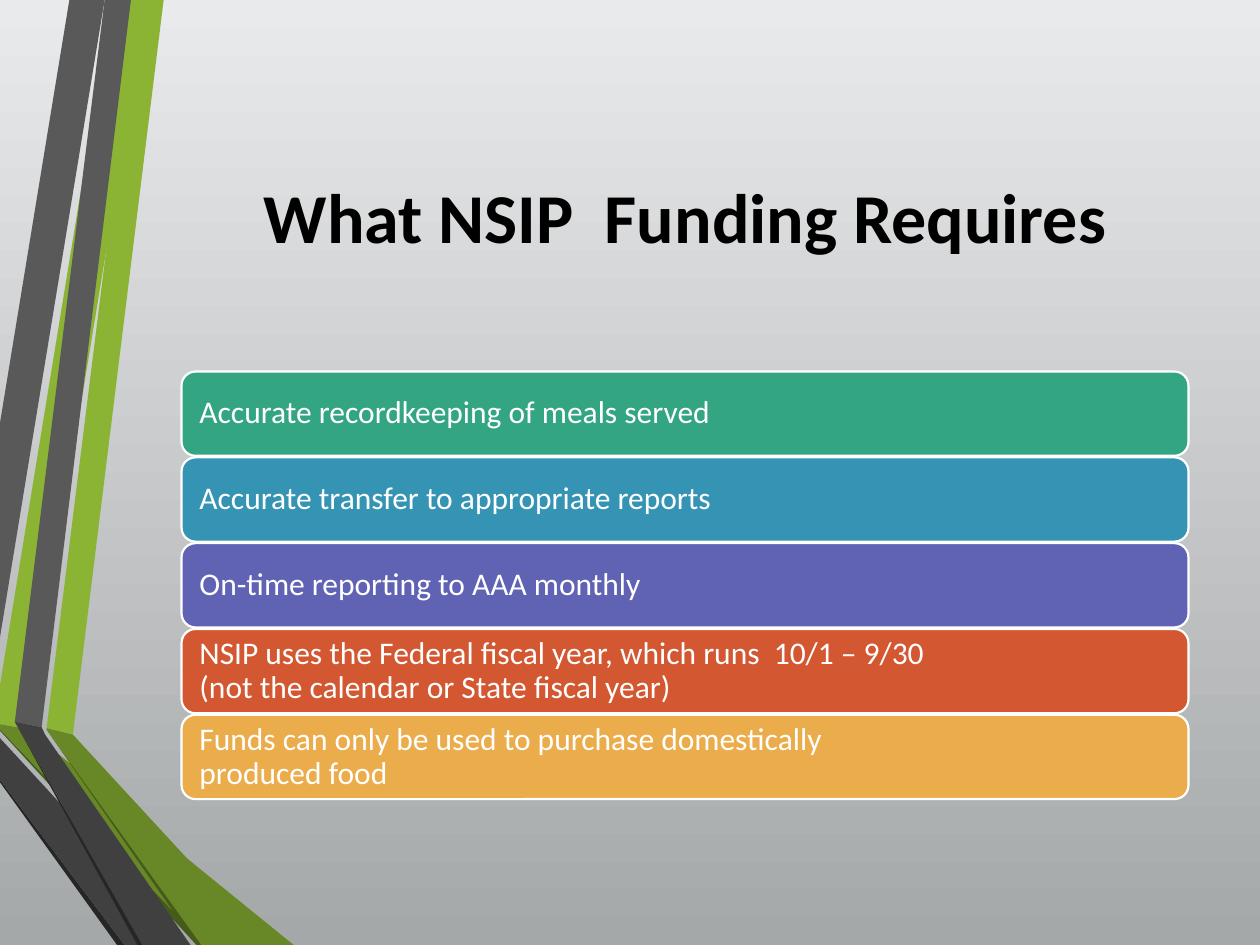
"""Build the slide on what NSIP funding requires."""
from pptx import Presentation
from pptx import util as u
from pptx.dml.color import RGBColor
from pptx.enum import shapes, text

BLACK = RGBColor(0x00, 0x00, 0x00)
WHITE = RGBColor(0xFF, 0xFF, 0xFF)
GREEN = RGBColor(0x8B, 0xB4, 0x34)
MOSS = RGBColor(0x68, 0x87, 0x27)
DARK_MOSS = RGBColor(0x46, 0x5A, 0x1A)
GRAY = RGBColor(0x59, 0x59, 0x59)
CHARCOAL = RGBColor(0x40, 0x40, 0x40)
SOOT = RGBColor(0x26, 0x26, 0x26)
SKY = RGBColor(0xE9, 0xEA, 0xEB)
STEEL = RGBColor(0xA5, 0xA8, 0xA9)

FONT = "Calibri"
HEADING = "What NSIP  Funding Requires"
REQUIREMENTS = [
    ("Accurate recordkeeping of meals served", RGBColor(0x33, 0xA5, 0x83)),
    ("Accurate transfer to appropriate reports", RGBColor(0x35, 0x94, 0xB4)),
    ("On-time reporting to AAA monthly", RGBColor(0x60, 0x63, 0xB4)),
    ("NSIP uses the Federal fiscal year, which runs  10/1 – 9/30\v"
     "(not the calendar or State fiscal year)", RGBColor(0xD3, 0x57, 0x31)),
    ("Funds can only be used to purchase domestically\vproduced food",
     RGBColor(0xEB, 0xAC, 0x4B)),
]
RIBBONS = [
    (GREEN, [(0, 13.82), (0, 14.6), (0.56, 14.7), (2.97, 0), (2.26, 0)]),
    (GRAY, [(2.11, 0), (1.4, 0), (0, 8.53), (0, 12.85)]),
    (SOOT, [(0, 15.72), (0, 15.77), (2.36, 19.05), (2.51, 19.05)]),
    (DARK_MOSS, [(0, 14.7), (0, 14.73), (3.96, 19.05), (4.14, 19.05)]),
    (MOSS, [(0, 14.7), (4.14, 19.05), (5.92, 19.05), (0.56, 14.7), (0, 14.6)]),
    (CHARCOAL, [(0, 15.72), (2.51, 19.05), (3.84, 19.05), (0, 14.88)]),
    (GREEN, [(0.94, 14.68), (1.47, 14.81), (3.3, 0), (2.77, 0)]),
    (GRAY, [(2.64, 0), (2.11, 0), (0.3, 14.55), (0.84, 14.66)]),
    (SOOT, [(0.3, 14.55), (2.77, 19.05), (2.87, 19.05)]),
    (DARK_MOSS, [(0.94, 14.71), (3.96, 19.05), (4.06, 19.05)]),
    (MOSS, [(0.94, 14.71), (4.06, 19.05), (5.38, 19.05), (1.47, 14.81), (0.94, 14.68)]),
    (CHARCOAL, [(3.84, 19.05), (0.91, 14.81), (0.84, 14.66), (0.3, 14.55), (2.87, 19.05)]),
]
LEFT, WIDTH = u.Cm(3.66), u.Cm(20.3)
BAR_TOP, BAR_HEIGHT, BAR_PITCH = u.Cm(7.49), u.Cm(1.7), u.Cm(1.73)


def style_font(paragraph, size, color, bold=False):
    for run in paragraph.runs:
        run.font.name = FONT
        run.font.size = u.Pt(size)
        run.font.bold = bold
        run.font.color.rgb = color


def paint_background(slide):
    backdrop = slide.background.fill
    backdrop.gradient()
    backdrop.gradient_angle = 270
    for stop, color in zip(backdrop.gradient_stops, (SKY, STEEL)):
        stop.color.rgb = color


def add_ribbon(slide, color, corners):
    start, *others = [(u.Cm(x), u.Cm(y)) for x, y in corners]
    outline = slide.shapes.build_freeform(*start)
    outline.add_line_segments(others, close=True)
    ribbon = outline.convert_to_shape()
    ribbon.shadow.inherit = False
    ribbon.fill.solid()
    ribbon.fill.fore_color.rgb = color
    ribbon.line.fill.background()


def set_heading(slide):
    heading = slide.shapes.title
    heading.left, heading.top = LEFT, u.Cm(1.91)
    heading.width, heading.height = WIDTH, u.Cm(4.88)
    frame = heading.text_frame
    frame.text = HEADING
    frame.vertical_anchor = text.MSO_ANCHOR.MIDDLE
    frame.paragraphs[0].alignment = text.PP_ALIGN.CENTER
    style_font(frame.paragraphs[0], 40, BLACK, bold=True)


def add_requirement(slide, row, wording, color):
    bar = slide.shapes.add_shape(shapes.MSO_SHAPE.ROUNDED_RECTANGLE, LEFT,
                                 BAR_TOP + row * BAR_PITCH, WIDTH, BAR_HEIGHT)
    bar.shadow.inherit = False
    bar.fill.solid()
    bar.fill.fore_color.rgb = color
    bar.line.color.rgb = WHITE
    bar.line.width = u.Pt(1.25)
    frame = bar.text_frame
    frame.word_wrap = True
    frame.vertical_anchor = text.MSO_ANCHOR.MIDDLE
    frame.margin_left = frame.margin_right = u.Cm(0.28)
    frame.margin_top = frame.margin_bottom = u.Cm(0.2)
    paragraph = frame.paragraphs[0]
    paragraph.text = wording
    paragraph.alignment = text.PP_ALIGN.LEFT
    paragraph.line_spacing = 0.9
    style_font(paragraph, 18, WHITE)


def main():
    deck = Presentation()
    deck.slide_width, deck.slide_height = u.Cm(25.4), u.Cm(19.05)
    slide = deck.slides.add_slide(deck.slide_layouts.get_by_name("Title Only"))
    paint_background(slide)
    for color, corners in RIBBONS:
        add_ribbon(slide, color, corners)
    set_heading(slide)
    for row, (wording, color) in enumerate(REQUIREMENTS):
        add_requirement(slide, row, wording, color)
    deck.save("out.pptx")


if __name__ == "__main__":
    main()
